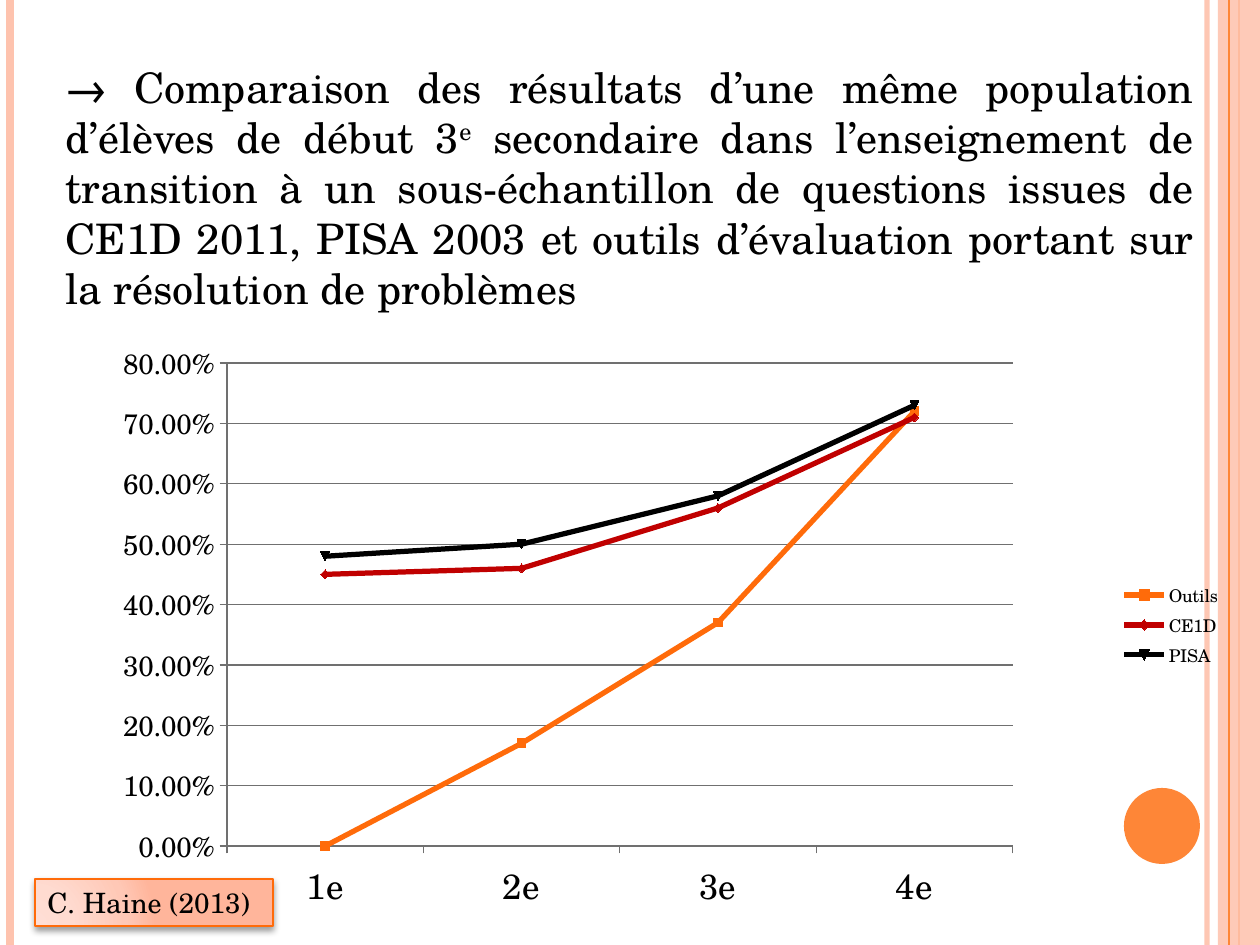
import pptx
import pptx.chart.data
import pptx.dml.color
import pptx.enum.chart
import pptx.enum.shapes
import pptx.enum.text
import pptx.oxml
import pptx.oxml.ns
import pptx.util

Pt = pptx.util.Pt
SHAPE = pptx.enum.shapes.MSO_SHAPE
NS = pptx.oxml.ns.nsdecls("a", "c")
INK = {"black": "000000", "peach": "FEC3AE", "orange": "FE8637",
       "vivid": "FF6B0A", "red": "C00000", "gray": "707070"}


def px(n):
    return round(n * 914400 / 126)


def rgb(name):
    return pptx.dml.color.RGBColor.from_string(INK[name])


class Deck:
    font = "TeX Gyre Schola"

    def __init__(self):
        self.prs = pptx.Presentation()
        self.prs.slide_width, self.prs.slide_height = px(1260), px(945)
        self.slide = self.prs.slides.add_slide(self.prs.slide_layouts[6])
        self.shapes = self.slide.shapes

    def fade(self, fill, alpha):
        tag = fill.find(".//" + pptx.oxml.ns.qn("a:srgbClr"))
        tag.append(pptx.oxml.parse_xml(f'<a:alpha {NS} val="{alpha * 1000}"/>'))

    def rule(self, x, width, color, alpha=100):
        kind = pptx.enum.shapes.MSO_CONNECTOR.STRAIGHT
        line = self.shapes.add_connector(kind, px(x), 0, px(x), px(945))
        line.line.width = Pt(width)
        line.line.color.rgb = rgb(color)
        props = line._element.spPr
        if alpha < 100:
            self.fade(props, alpha)
        props.append(pptx.oxml.parse_xml(f"<a:effectLst {NS}/>"))

    def shape(self, kind, box, color, alpha=100):
        item = self.shapes.add_shape(kind, *map(px, box))
        item.shadow.inherit = False
        item.fill.solid()
        item.fill.fore_color.rgb = rgb(color)
        item.line.fill.background()
        if alpha < 100:
            self.fade(item._element.spPr, alpha)
        return item

    def style(self, font, size, color="black"):
        font.name, font.size = self.font, Pt(size)
        font.color.rgb = rgb(color)

    def run(self, para, text, size, base=0):
        run = para.add_run()
        run.text = text
        self.style(run.font, size)
        if base:
            run.font._element.set("baseline", str(base * 1000))

    def text(self, box, runs, size, indent):
        frame = self.shapes.add_textbox(*map(px, box)).text_frame
        frame.word_wrap = True
        para = frame.paragraphs[0]
        para.alignment = pptx.enum.text.PP_ALIGN.JUSTIFY
        para.space_before = Pt(size * 0.2)
        para._p.get_or_add_pPr().set("marL", str(px(indent)))
        for words, base in runs:
            self.run(para, words, size, base)

    def label(self, box, words, size):
        item = self.shape(SHAPE.RECTANGLE, box, "peach")
        item.line.color.rgb = rgb("vivid")
        item.line.width = Pt(1)
        # Radial gradient and soft shadow
        props = item._element.spPr
        stops = [(0, "FFDED5"), (30, "FFDBD0"), (75, "FFC8B6"), (100, "FFB59B")]
        marks = "".join(f'<a:gs pos="{at * 1000}"><a:srgbClr val="{hue}"/></a:gs>'
                        for at, hue in stops)
        props.replace(props.find(pptx.oxml.ns.qn("a:solidFill")), pptx.oxml.parse_xml(
            f'<a:gradFill {NS}><a:gsLst>{marks}</a:gsLst><a:path path="circle">'
            '<a:fillToRect l="5000" t="100000" r="120000" b="10000"/>'
            '</a:path></a:gradFill>'))
        props.find(pptx.oxml.ns.qn("a:effectLst")).append(pptx.oxml.parse_xml(
            f'<a:outerShdw {NS} blurRad="{Pt(4)}" dist="{Pt(2)}" dir="5400000">'
            f'<a:srgbClr val="{INK["black"]}"><a:alpha val="40000"/>'
            '</a:srgbClr></a:outerShdw>'))
        para = item.text_frame.paragraphs[0]
        para.alignment = pptx.enum.text.PP_ALIGN.LEFT
        self.run(para, words, size)

    def axis(self, axis, size):
        self.style(axis.tick_labels.font, size)
        axis.major_tick_mark = pptx.enum.chart.XL_TICK_MARK.OUTSIDE
        axis.minor_tick_mark = pptx.enum.chart.XL_TICK_MARK.NONE
        self.pen(axis.format.line, 0.75, "gray")

    def pen(self, line, width, color):
        line.width = Pt(width)
        line.color.rgb = rgb(color)

    def chart(self, box, cats, rows, plot):
        data = pptx.chart.data.CategoryChartData(number_format="0.00%")
        data.categories = cats
        for name, vals, _ in rows:
            data.add_series(name, vals)
        kind = pptx.enum.chart.XL_CHART_TYPE.LINE_MARKERS
        chart = self.shapes.add_chart(kind, *map(px, box), data).chart
        self.style(chart.font, 10)
        chart.has_title = False
        chart.has_legend = True
        chart.legend.position = pptx.enum.chart.XL_LEGEND_POSITION.RIGHT
        chart.legend.include_in_layout = False
        # Axes
        self.axis(chart.category_axis, 20)
        scale = chart.value_axis
        self.axis(scale, 16)
        scale.minimum_scale, scale.maximum_scale, scale.major_unit = 0, 0.8, 0.1
        scale.tick_labels.number_format = "0.00%"
        scale.tick_labels.number_format_is_linked = False
        self.pen(scale.major_gridlines.format.line, 0.75, "gray")
        # Series
        chart.plots[0].vary_by_categories = False
        for line, (_, _, color) in zip(chart.plots[0].series, rows):
            line.smooth = False
            self.pen(line.format.line, 3, color)
            line.marker.size = 5
            line.marker.format.fill.solid()
            line.marker.format.fill.fore_color.rgb = rgb(color)
            self.pen(line.marker.format.line, 0.75, color)
        # Fixed inner plot area
        area = chart._chartSpace.chart.plotArea
        for old in area.findall(pptx.oxml.ns.qn("c:layout")):
            area.remove(old)
        sides = "".join(f'<c:{key} val="{val}"/>' for key, val in zip("xywh", plot))
        area.insert(0, pptx.oxml.parse_xml(
            f'<c:layout {NS}><c:manualLayout><c:layoutTarget val="inner"/>'
            f'<c:xMode val="edge"/><c:yMode val="edge"/>{sides}'
            '</c:manualLayout></c:layout>'))


def main():
    deck = Deck()

    # Side bands
    deck.rule(1207, 3, "peach", 93)
    deck.rule(10, 4.5, "peach")
    deck.rule(1239, 1.5, "orange")
    deck.shape(SHAPE.RECTANGLE, (1218, 0, 42, 945), "peach", 87)
    deck.rule(1229, 0.75, "orange")
    deck.shape(SHAPE.OVAL, (1124, 788, 76, 76), "orange")

    # Statement
    deck.text((15, 55, 1191, 630), [
        ("→ Comparaison des résultats d’une même population d’élèves de début 3", 0),
        ("e", 30),
        (" secondaire dans l’enseignement de transition à un sous-échantillon de "
         "questions issues de CE1D 2011, PISA 2003 et outils d’évaluation portant "
         "sur la résolution de problèmes", 0)], 24, 38)

    # Results
    deck.chart((123, 334, 1111, 582), ["1e", "2e", "3e", "4e"], [
        ("Outils", (0, 0.17, 0.37, 0.72), "vivid"),
        ("CE1D", (0.45, 0.46, 0.56, 0.71), "red"),
        ("PISA", (0.48, 0.5, 0.58, 0.73), "black")], (0.09, 0.05, 0.71, 0.83))

    # Source
    deck.label((35, 879, 238, 47), "C. Haine (2013)", 16)
    deck.prs.save("out.pptx")


if __name__ == "__main__":
    main()
